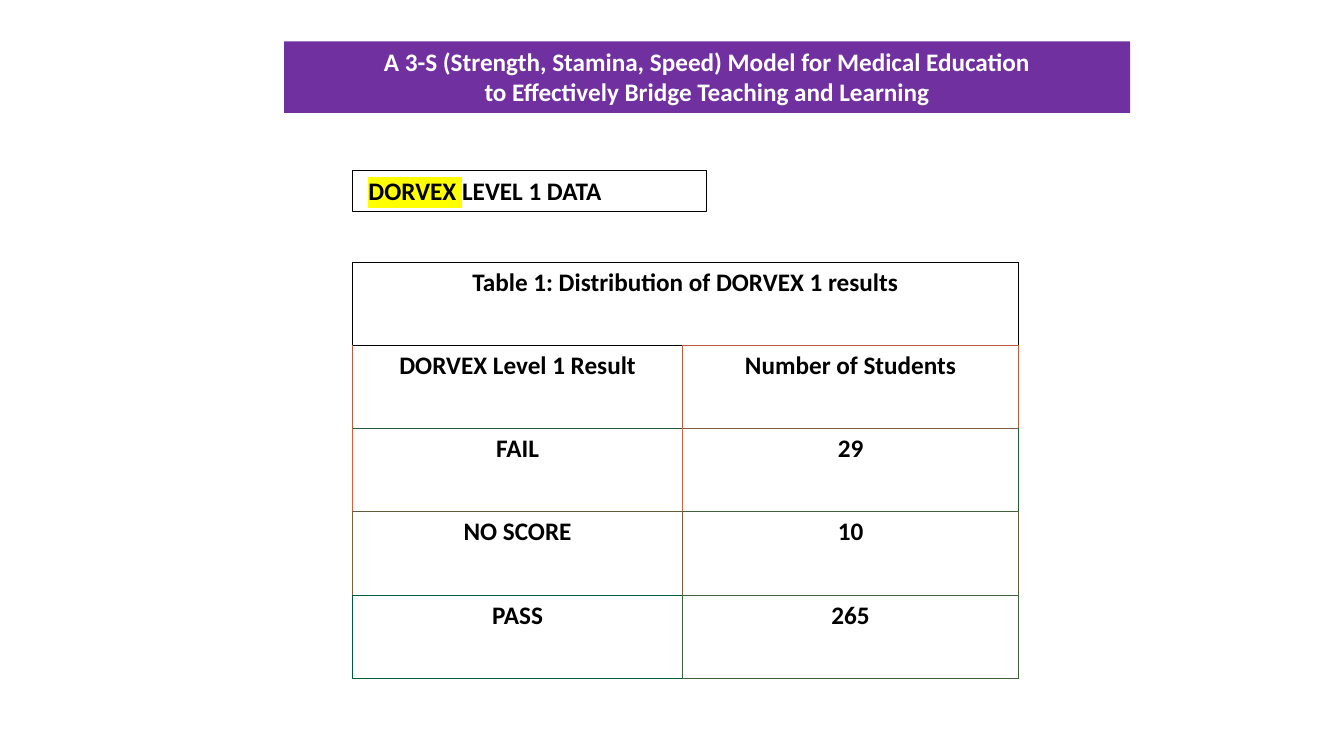
from lxml import etree
from pptx import Presentation
from pptx.dml.color import RGBColor
from pptx.enum.shapes import MSO_SHAPE
from pptx.enum.text import MSO_ANCHOR, MSO_AUTO_SIZE, PP_ALIGN
from pptx.oxml.ns import qn
from pptx.util import Inches, Pt

RECTANGLE = MSO_SHAPE.RECTANGLE
MIDDLE, TOP = MSO_ANCHOR.MIDDLE, MSO_ANCHOR.TOP
CENTER, LEFT = PP_ALIGN.CENTER, PP_ALIGN.LEFT
NO_AUTOFIT = MSO_AUTO_SIZE.NONE

SLIDE_WIDTH, SLIDE_HEIGHT = Inches(13.33), Inches(7.5)
TITLE_ONLY_LAYOUT = 5
BLACK, WHITE, PURPLE, YELLOW = "000000", "FFFFFF", "7030A0", "FFFF00"

# Left, top, width and height in percent of the slide
TITLE_BOX = (21.14, 5.47, 62.94, 9.47)
HEADING_BOX = (26.22, 22.56, 26.38, 5.37)
TABLE_BOX = (26.22, 34.67, 49.55, 55.07)
COLUMN_PERCENTS = (49.62, 50.38)

TITLE_LINES = (
    "A 3-S (Strength, Stamina, Speed) Model for Medical Education",
    "to Effectively Bridge Teaching and Learning",
)
HEADING_RUNS = ("DORVEX ", "LEVEL 1 DATA")
TABLE_CAPTION = "Table 1: Distribution of DORVEX 1 results"
CAPTION_BORDERS = (
    (BLACK, BLACK, BLACK, BLACK),
    (BLACK, BLACK, BLACK, "C05A3A"),
)
# Each cell: text, then its left, right, top and bottom border colours
RESULT_ROWS = (
    (("DORVEX Level 1 Result", ("C05A3A", "C05A3A", BLACK, "20613A")),
     ("Number of Students", ("C05A3A", "C05A3A", "C05A3A", "805C3A"))),
    (("FAIL", ("E05C3A", "E0603A", "20613A", "605E3A")),
     ("29", ("E0603A", "205D3A", "805C3A", "405F3A"))),
    (("NO SCORE", ("805E3A", "805C3A", "605E3A", "005D3A")),
     ("10", ("805C3A", "605E3A", "405F3A", "40623A"))),
    (("PASS", ("005D3A", "40623A", "005D3A", "005D3A")),
     ("265", ("40623A", "40623A", "40623A", "40623A"))),
)


def color(hex_string):
    return RGBColor.from_string(hex_string)


def place(box):
    left, top, width, height = box
    return (int(SLIDE_WIDTH * left / 100), int(SLIDE_HEIGHT * top / 100),
            int(SLIDE_WIDTH * width / 100), int(SLIDE_HEIGHT * height / 100))


def format_text(text_frame, font_color, alignment):
    for paragraph in text_frame.paragraphs:
        paragraph.alignment = alignment
        paragraph.line_spacing = 1.0
        paragraph.space_before = Pt(0)
        for run in paragraph.runs:
            run.font.name = "Calibri"
            run.font.size = Pt(18)
            run.font.bold = True
            run.font.color.rgb = color(font_color)


def highlight(run, hex_string):
    properties = run.font._element
    mark = etree.Element(qn("a:highlight"))
    etree.SubElement(mark, qn("a:srgbClr"), val=hex_string)
    properties.find(qn("a:solidFill")).addnext(mark)


def set_borders(cell, border_colors, bottom_width):
    properties = cell._tc.get_or_add_tcPr()
    widths = (1, 1, 1, bottom_width)
    for side, hex_string, width in zip("LRTB", border_colors, widths):
        line = etree.SubElement(properties, qn(f"a:ln{side}"), w=str(Pt(width)))
        fill = etree.SubElement(line, qn("a:solidFill"))
        etree.SubElement(fill, qn("a:srgbClr"), val=hex_string)


def fill_cell(cell, text, border_colors, bottom_width=1):
    set_borders(cell, border_colors, bottom_width)
    cell.fill.solid()
    cell.fill.fore_color.rgb = color(WHITE)
    cell.vertical_anchor = TOP
    cell.text_frame.text = text
    format_text(cell.text_frame, BLACK, CENTER)


def add_title(slide, box):
    title = slide.shapes.title
    title.left, title.top, title.width, title.height = place(box)
    title.fill.solid()
    title.fill.fore_color.rgb = color(PURPLE)
    text_frame = title.text_frame
    text_frame.text = "\n".join(TITLE_LINES)
    text_frame.auto_size = NO_AUTOFIT
    text_frame.vertical_anchor = TOP
    format_text(text_frame, WHITE, CENTER)


def add_heading(slide, box):
    heading = slide.shapes.add_shape(RECTANGLE, *place(box))
    heading.shadow.inherit = False
    heading.fill.background()
    heading.line.color.rgb = color(BLACK)
    heading.line.width = Pt(0.75)
    text_frame = heading.text_frame
    text_frame.word_wrap = True
    text_frame.vertical_anchor = MIDDLE
    text_frame.margin_left = Inches(0.16)
    paragraph = text_frame.paragraphs[0]
    for text in HEADING_RUNS:
        paragraph.add_run().text = text
    format_text(text_frame, BLACK, LEFT)
    highlight(paragraph.runs[0], YELLOW)


def add_results_table(slide, box):
    left, top, width, height = place(box)
    row_count = len(RESULT_ROWS) + 1
    table = slide.shapes.add_table(
        row_count, len(COLUMN_PERCENTS), left, top, width, height).table
    table.first_row = False
    table.horz_banding = False
    for column, percent in zip(table.columns, COLUMN_PERCENTS):
        column.width = int(width * percent / 100)

    # Caption across both columns
    caption, spanned = table.cell(0, 0), table.cell(0, 1)
    caption.merge(spanned)
    fill_cell(caption, TABLE_CAPTION, CAPTION_BORDERS[0])
    set_borders(spanned, CAPTION_BORDERS[1], 1)

    # Column heads and results
    for row_index, row in enumerate(RESULT_ROWS, start=1):
        bottom_width = 0.75 if row_index == row_count - 1 else 1
        for column_index, (text, border_colors) in enumerate(row):
            fill_cell(table.cell(row_index, column_index), text,
                      border_colors, bottom_width)


def main():
    presentation = Presentation()
    presentation.slide_width = SLIDE_WIDTH
    presentation.slide_height = SLIDE_HEIGHT
    slide = presentation.slides.add_slide(
        presentation.slide_layouts[TITLE_ONLY_LAYOUT])
    add_results_table(slide, TABLE_BOX)
    add_heading(slide, HEADING_BOX)
    add_title(slide, TITLE_BOX)
    presentation.save("out.pptx")


if __name__ == "__main__":
    main()
